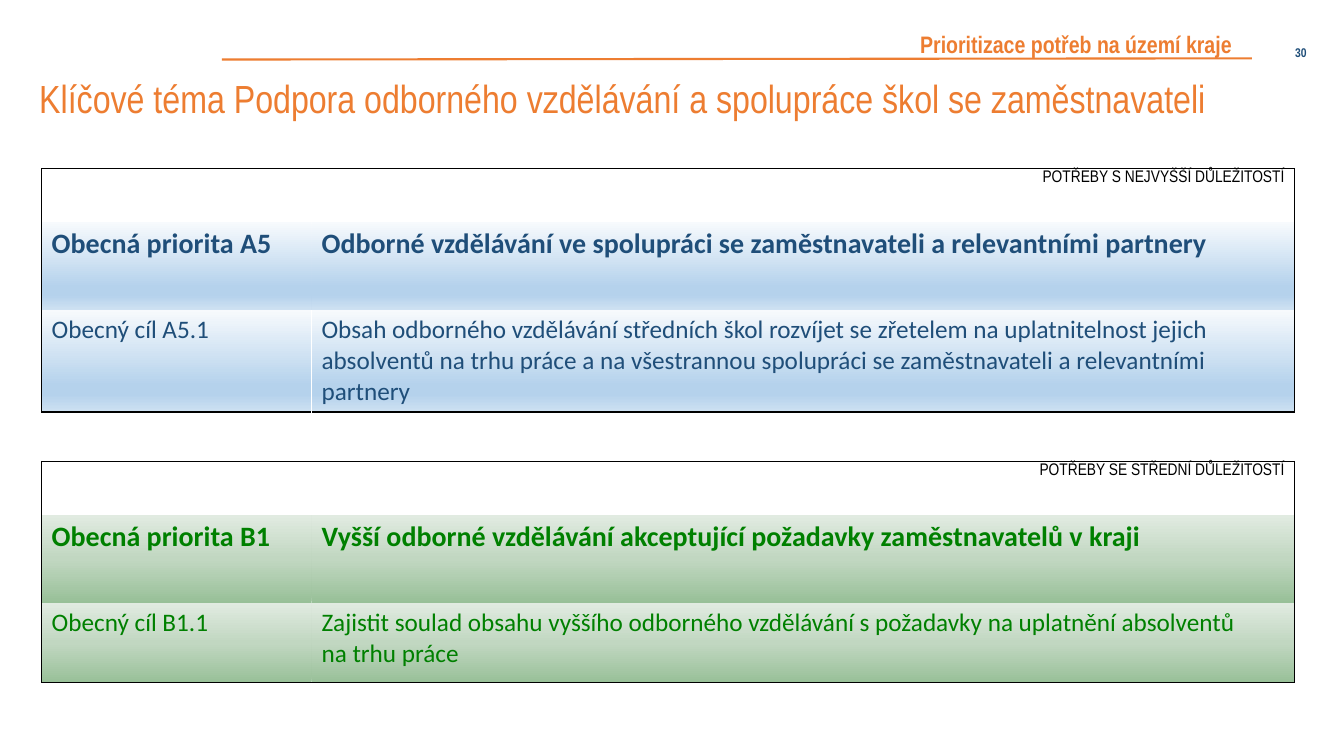
from lxml import etree
from pptx import Presentation
from pptx.dml.color import RGBColor
from pptx.enum.shapes import MSO_CONNECTOR
from pptx.enum.text import MSO_ANCHOR, PP_ALIGN
from pptx.oxml.ns import qn
from pptx.util import Cm, Pt

LEFT, RIGHT = PP_ALIGN.LEFT, PP_ALIGN.RIGHT
MIDDLE, BOTTOM = MSO_ANCHOR.MIDDLE, MSO_ANCHOR.BOTTOM
STRAIGHT = MSO_CONNECTOR.STRAIGHT

ORANGE, NAVY, GREEN = "ED7D31", "1F4E79", "008000"
BLACK, WHITE = "000000", "FFFFFF"
NARROW, BODY = "Arial Narrow", "Calibri"
PLAIN_TABLE = "{2D5ABB26-0587-4C30-8999-92F81FD0307C}"
COL_WIDTHS = (6.8, 24.78)
HEAD_HEIGHTS = (0.71, 0.64, 2.21)
BLUE_FADE = (90, [(0, "F7FAFD"), (74, "B5D2EC"), (83, "B5D2EC"), (100, "CEE1F2")])
GREEN_FADE = (270, [(0, "98C098"), (50, "C1D7C1"), (100, "E1EBE1")])


def rgb(color):
    return RGBColor.from_string(color)


def write(tf, text, size, color, name, bold=False, align=LEFT, spacing=None):
    """Fill a text frame, one paragraph for each line of text."""
    tf.word_wrap = True
    for i, line in enumerate(text.split("\n")):
        p = tf.paragraphs[0] if i == 0 else tf.add_paragraph()
        p.alignment = align
        p.line_spacing = spacing
        r = p.add_run()
        r.text = line
        for key, value in {"size": Pt(size), "name": name, "bold": bold}.items():
            setattr(r.font, key, value)
        r.font.color.rgb = rgb(color)


def add_text(s, box, text, anchor=MIDDLE, **fmt):
    tf = s.shapes.add_textbox(*map(Cm, box)).text_frame
    tf.vertical_anchor = anchor
    write(tf, text, **fmt)


def add_color(parent, color):
    fill = etree.SubElement(parent, qn("a:solidFill"))
    etree.SubElement(fill, qn("a:srgbClr"), val=color)


def set_borders(cell, colors):
    """Draw 1 pt borders; colors maps the sides L, R, T, B to hex strings."""
    for side in "LRTB":
        if side in colors:
            ln = etree.SubElement(cell._tc.get_or_add_tcPr(), qn(f"a:ln{side}"),
                                  w=str(Pt(1)))
            add_color(ln, colors[side])


def set_gradient(cell, angle, stops):
    grad = etree.SubElement(cell._tc.get_or_add_tcPr(), qn("a:gradFill"))
    gs_list = etree.SubElement(grad, qn("a:gsLst"))
    for pos, color in stops:
        gs = etree.SubElement(gs_list, qn("a:gs"), pos=str(pos * 1000))
        etree.SubElement(gs, qn("a:srgbClr"), val=color)
    etree.SubElement(grad, qn("a:lin"), ang=str(angle * 60000), scaled="0")


def header(s, left, top):
    """Section name over a rule, with the page number beside it."""
    line = s.shapes.add_connector(STRAIGHT, Cm(left), Cm(top + 0.69),
                                  Cm(left + 25.96), Cm(top + 0.66))
    line.line.color.rgb = rgb(ORANGE)
    line.line.width = Pt(1.5)
    etree.SubElement(line._element.spPr, qn("a:effectLst"))
    add_text(s, (left + 17.35, top, 8.59, 0.79), "Prioritizace potřeb na území kraje",
             BOTTOM, size=17, color=ORANGE, name=NARROW, bold=True, spacing=0.9)
    add_text(s, (left + 25.58, top, 2.01, 1.02), "30",
             size=9, color=NAVY, name=NARROW, bold=True, align=RIGHT)


def priority_table(s, left, top, goal_height, label, priority, goal, color, fade,
                   divider=None):
    """Framed table: importance label, spacer row, priority row and goal row."""
    rows = [("", label), ("", ""), priority, goal]
    heights = (*HEAD_HEIGHTS, goal_height)
    frame = s.shapes.add_table(len(rows), 2, Cm(left), Cm(top),
                               Cm(sum(COL_WIDTHS)), Cm(sum(heights)))
    table = frame.table
    table.first_row = table.horz_banding = False
    frame._element.find(".//" + qn("a:tableStyleId")).text = PLAIN_TABLE
    for col, width in zip(table.columns, COL_WIDTHS):
        col.width = Cm(width)
    for i, (row, height, texts) in enumerate(zip(table.rows, heights, rows)):
        row.height = Cm(height)
        for j, text in enumerate(texts):
            cell = row.cells[j]
            sides = {"LR"[j]: BLACK}
            if i == 0:
                sides["T"] = BLACK
            elif i == 3:
                sides["B"] = BLACK
                if divider:
                    sides["RL"[j]] = divider
            set_borders(cell, sides)
            if i < 2:
                cell.margin_top = cell.margin_bottom = Cm(0.05)
                cell.fill.background()
            else:
                set_gradient(cell, *fade)
            if not text:
                p = cell.text_frame.paragraphs[0]
                etree.SubElement(p._p, qn("a:endParaRPr"), sz="800")
            elif i == 0:
                write(cell.text_frame, text, 12, BLACK, NARROW, align=RIGHT)
            else:
                write(cell.text_frame, text, 20 if i == 2 else 18, color, BODY,
                      bold=i == 2)


def main():
    prs = Presentation()
    prs.slide_width, prs.slide_height = Cm(33.87), Cm(19.05)
    s = prs.slides.add_slide(prs.slide_layouts[6])
    header(s, 5.59, 0.81)
    add_text(s, (0.74, 1.75, 33.13, 1.57),
             "Klíčové téma Podpora odborného vzdělávání a spolupráce škol "
             "se zaměstnavateli",
             size=28, color=ORANGE, name=NARROW, spacing=0.9)
    priority_table(
        s, 1.05, 4.25, 2.57, "POTŘEBY S NEJVYŠŠÍ DŮLEŽITOSTÍ",
        ("Obecná priorita A5",
         "Odborné vzdělávání ve spolupráci se zaměstnavateli a relevantními partnery"),
        ("Obecný cíl A5.1",
         "Obsah odborného vzdělávání středních škol rozvíjet se zřetelem na "
         "uplatnitelnost jejich absolventů na trhu práce a na všestrannou spolupráci "
         "se zaměstnavateli a relevantními partnery"),
        NAVY, BLUE_FADE, WHITE)
    priority_table(
        s, 1.05, 11.63, 2.01, "POTŘEBY SE STŘEDNÍ DŮLEŽITOSTÍ",
        ("Obecná priorita B1",
         "Vyšší odborné vzdělávání akceptující požadavky zaměstnavatelů v kraji"),
        ("Obecný cíl B1.1",
         "Zajistit soulad obsahu vyššího odborného vzdělávání s požadavky na "
         "uplatnění absolventů\nna trhu práce"),
        GREEN, GREEN_FADE)
    prs.save("out.pptx")


if __name__ == "__main__":
    main()
